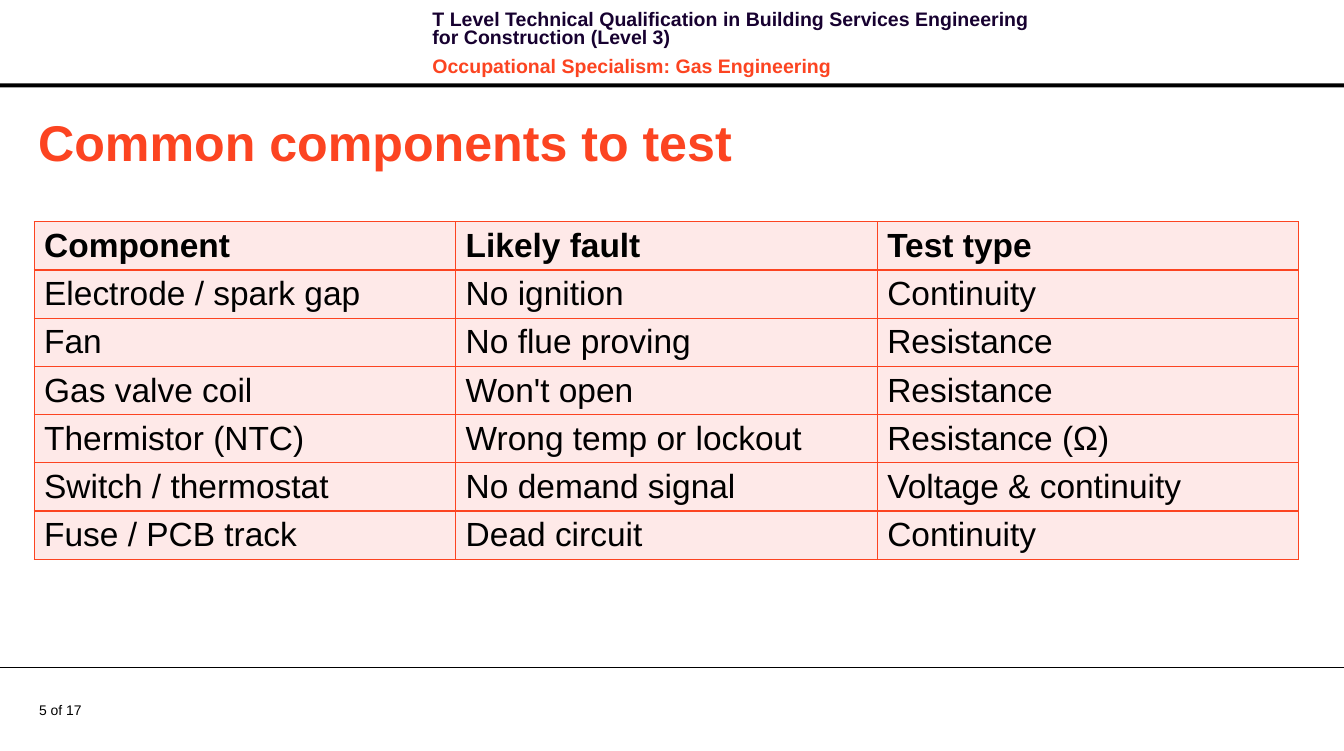
from pptx import Presentation
from pptx import util as u
from pptx.dml.color import RGBColor
from pptx.enum import shapes, text
from pptx.oxml import parse_xml
from pptx.oxml.ns import nsdecls
from lxml import etree

WIDTH, HEIGHT = u.Inches(13.39), u.Inches(7.48)
BLACK = RGBColor(0x00, 0x00, 0x00)
NAVY = RGBColor(0x17, 0x01, 0x30)
ORANGE = RGBColor(0xFC, 0x44, 0x21)
BLUSH = RGBColor(0xFE, 0xE9, 0xE8)

HEADER = [
    ("T Level Technical Qualification in Building Services Engineering "
     "for Construction (Level 3)", NAVY),
    ("Occupational Specialism: Gas Engineering", ORANGE),
]
TESTS = [
    ("Component", "Likely fault", "Test type"),
    ("Electrode / spark gap", "No ignition", "Continuity"),
    ("Fan", "No flue proving", "Resistance"),
    ("Gas valve coil", "Won't open", "Resistance"),
    ("Thermistor (NTC)", "Wrong temp or lockout", "Resistance (Ω)"),
    ("Switch / thermostat", "No demand signal", "Voltage & continuity"),
    ("Fuse / PCB track", "Dead circuit", "Continuity"),
]


def box(left, top, width, height):
    return [u.Inches(length) for length in (left, top, width, height)]


def style(paragraph, size, color, bold=False):
    font = paragraph.font
    font.name, font.size, font.bold = "Arial", u.Pt(size), bold
    font.color.rgb = color


def add_header(slide, area):
    """Course name above a thick rule that closes the header band."""
    left, top, width, height = area
    frame = slide.shapes.add_textbox(
        left + int(width * 0.3144), top + u.Inches(0.07),
        int(width * 0.4757), u.Inches(0.64)).text_frame
    frame.word_wrap = True
    for i, (line, color) in enumerate(HEADER):
        paragraph = frame.add_paragraph() if i else frame.paragraphs[0]
        paragraph.text = line
        paragraph.line_spacing = u.Pt(13.1)
        paragraph.space_before = u.Pt(4 if i else 0)
        paragraph.space_after = u.Pt(4)
        style(paragraph, 14, color, bold=True)

    thickness = u.Inches(0.04)
    rule = slide.shapes.add_shape(shapes.MSO_SHAPE.RECTANGLE, left,
                                  top + height - thickness, width, thickness)
    rule.shadow.inherit = False
    rule.fill.solid()
    rule.fill.fore_color.rgb = BLACK
    rule.line.fill.background()


def add_footer(slide, area):
    """Thin rule along the top of the footer, page count below it."""
    left, top, width, _ = area
    rule = slide.shapes.add_connector(shapes.MSO_CONNECTOR.STRAIGHT,
                                      left, top, left + width, top)
    rule.line.color.rgb = BLACK
    rule.line.width = u.Pt(0.75)
    properties = rule._element.spPr
    etree.SubElement(properties, "{http://schemas.openxmlformats.org/drawingml/2006/main}effectLst")

    frame = slide.shapes.add_textbox(left + u.Inches(0.39), top + u.Inches(0.34),
                                     u.Inches(0.64), u.Inches(0.17)).text_frame
    frame.margin_left = frame.margin_right = 0
    frame.margin_top = frame.margin_bottom = 0
    frame.word_wrap = True
    frame.vertical_anchor = text.MSO_ANCHOR.MIDDLE
    page_count = frame.paragraphs[0]
    page_count.text = "5 of 17"
    style(page_count, 10, BLACK)


def set_title(slide, area, words):
    title = slide.shapes.title
    title.left, title.top, title.width, title.height = area
    frame = title.text_frame
    frame.vertical_anchor = text.MSO_ANCHOR.MIDDLE
    heading = frame.paragraphs[0]
    heading.text = words
    heading.alignment = text.PP_ALIGN.LEFT
    style(heading, 36, ORANGE, bold=True)


def outline_cell(cell):
    """Orange 1 pt border on every side; borders precede the fill."""
    properties = cell._tc.get_or_add_tcPr()
    for position, side in enumerate(("lnL", "lnR", "lnT", "lnB")):
        properties.insert(position, parse_xml(
            f'<a:{side} {nsdecls("a")} w="{u.Pt(1)}"><a:solidFill>'
            f'<a:srgbClr val="{ORANGE}"/></a:solidFill></a:{side}>'))


def add_tests_table(slide, area):
    left, top, width, height = area
    table = slide.shapes.add_table(len(TESTS), len(TESTS[0]), left, top,
                                   width, height).table
    for row, entries in enumerate(TESTS):
        table.rows[row].height = height // len(TESTS)
        for column, entry in enumerate(entries):
            cell = table.cell(row, column)
            cell.fill.solid()
            cell.fill.fore_color.rgb = BLUSH
            cell.vertical_anchor = text.MSO_ANCHOR.MIDDLE
            cell.margin_top = cell.margin_bottom = u.Inches(0.04)
            paragraph = cell.text_frame.paragraphs[0]
            paragraph.text = entry
            style(paragraph, 24, BLACK, bold=row == 0)
            outline_cell(cell)


def main():
    deck = Presentation()
    deck.slide_width, deck.slide_height = WIDTH, HEIGHT
    slide = deck.slides.add_slide(deck.slide_layouts.get_by_name("Title Only"))
    add_header(slide, box(0, 0, 13.39, 0.87))
    add_footer(slide, box(0, 6.65, 13.39, 0.83))
    set_title(slide, box(0.28, 1.05, 12.72, 0.71), "Common components to test")
    add_tests_table(slide, box(0.34, 2.21, 12.6, 3.3))
    deck.save("out.pptx")


if __name__ == "__main__":
    main()
